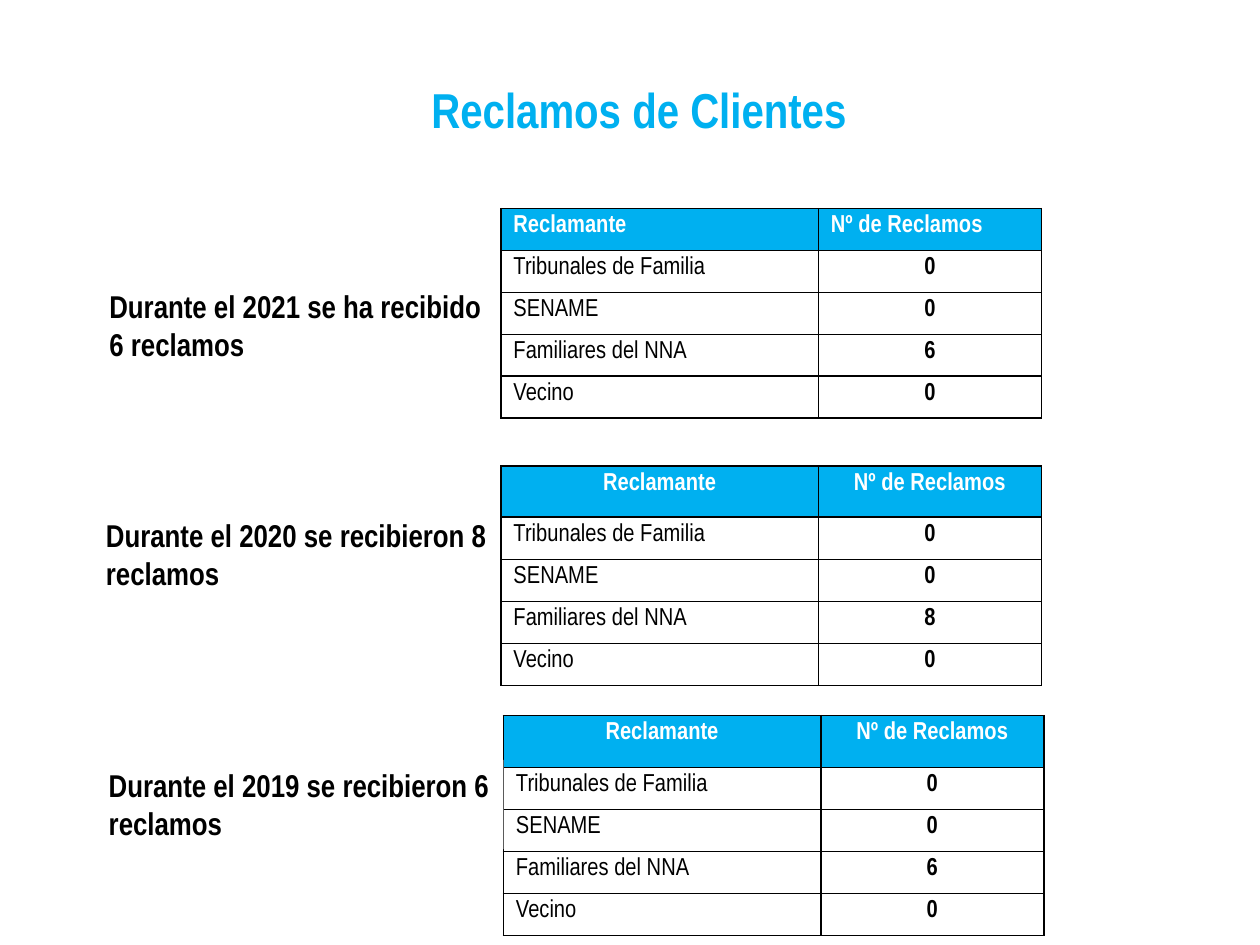
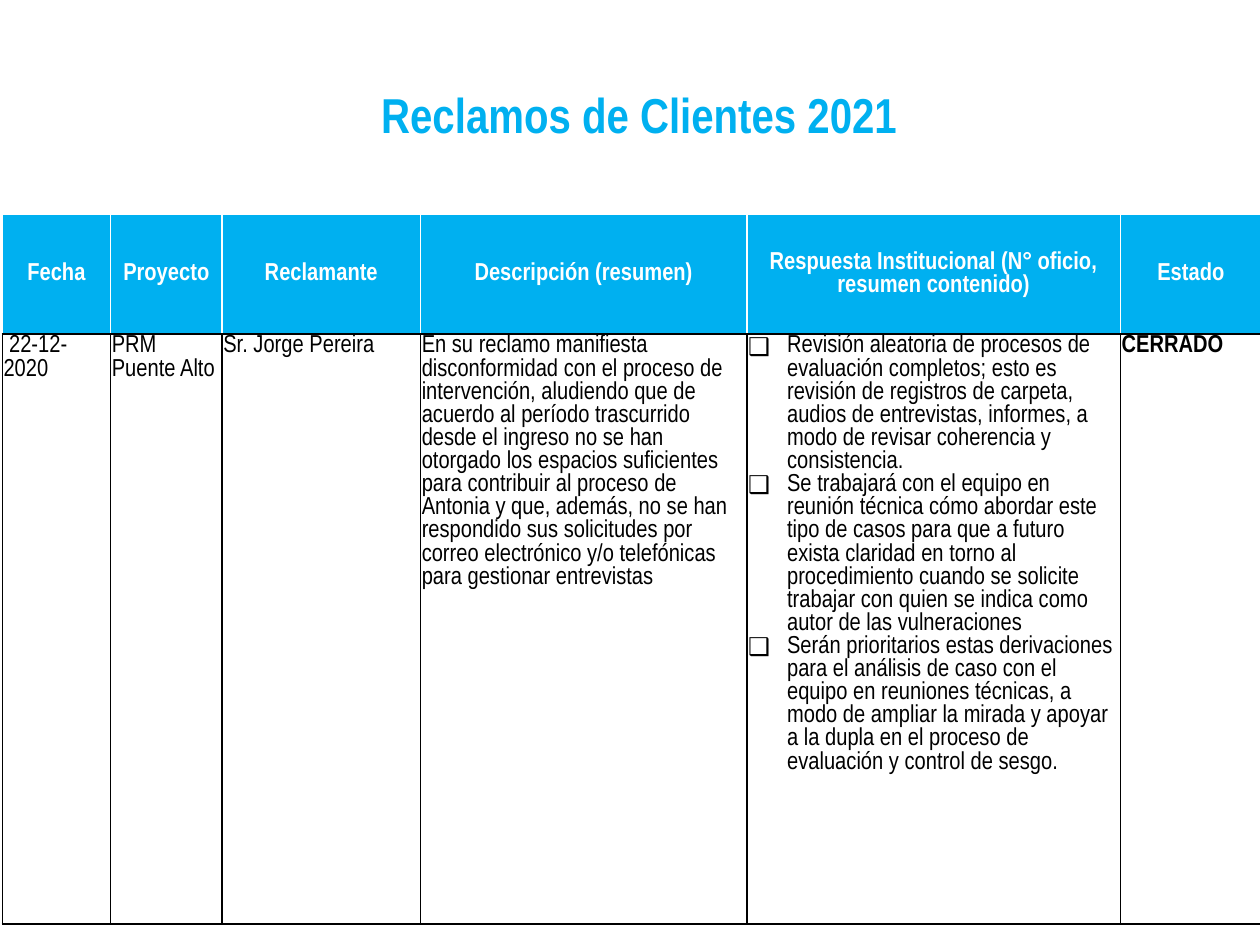
from collections import namedtuple

from lxml.etree import SubElement
from pptx import Presentation
from pptx.dml.color import RGBColor
from pptx.enum.text import MSO_ANCHOR, MSO_AUTO_SIZE, PP_ALIGN
from pptx.oxml import parse_xml
from pptx.oxml.ns import nsdecls, qn
from pptx.util import Inches, Pt

Box = namedtuple("Box", "left top width height")

SLIDE_WIDTH, SLIDE_HEIGHT = Inches(10), Inches(7.5)
COLUMN, ROW = SLIDE_WIDTH / 100, SLIDE_HEIGHT / 75
SKY, BLACK, WHITE = "00B0F0", "000000", "FFFFFF"
FONT = "Arial Narrow"

TITLE = {"name": FONT, "size": Pt(28), "bold": True}
LABEL = {"name": FONT, "size": Pt(18), "bold": True}
STRONG = {"name": FONT, "size": Pt(14), "bold": True}
PLAIN = {"name": FONT, "size": Pt(14), "bold": False}
CLAIM_MARGINS = {"margin_left": Inches(0.1), "margin_right": Inches(0.1),
                 "margin_top": Inches(0.05), "margin_bottom": Inches(0.05)}
DETAIL_MARGINS = {"margin_left": Inches(0.01), "margin_right": Inches(0.01),
                  "margin_top": Inches(0.01), "margin_bottom": 0}

CLAIMANTS = ["Tribunales de Familia", "SENAME", "Familiares del NNA", "Vecino"]
CLAIM_COLUMNS = [25.2, 17.7]
CLAIM_YEARS = [
    {"box": Box(7.7, 16.55, 74.95, 16.65), "label_drop": 5.75, "header_height": 3.33,
     "label": "Durante el 2021 se ha recibido 6 reclamos",
     "counts": [0, 0, 6, 0], "header_align": PP_ALIGN.LEFT, "label_fill": None},
    {"box": Box(7.43, 37, 75.22, 17.4), "label_drop": 3.45, "header_height": 4.05,
     "label": "Durante el 2020 se recibieron 8 reclamos",
     "counts": [0, 0, 8, 0], "header_align": PP_ALIGN.CENTER, "label_fill": None},
    {"box": Box(7.65, 56.8, 75.2, 17.4), "label_drop": 3.5, "header_height": 4.1,
     "label": "Durante el 2019 se recibieron 6 reclamos",
     "counts": [0, 0, 6, 0], "header_align": PP_ALIGN.CENTER, "label_fill": WHITE},
]

DETAIL_COLUMNS = [8.6, 8.85, 15.75, 25.9, 29.65, 11.2]
DETAIL_ROWS = [9.5, 9.5, 9.5, 9.5, 18.35]
FIRST_MERGED = 3
DETAIL_HEADERS = ["Fecha", "Proyecto", "Reclamante", "Descripción (resumen)",
                  "Respuesta Institucional (N° oficio, resumen contenido)", "Estado"]
DETAIL_TEXTS = [
    [" 22-12-2020"],
    ["PRM Puente Alto"],
    ["Sr. Jorge Pereira"],
    ["En su reclamo manifiesta disconformidad con el proceso de intervención, "
     "aludiendo que de acuerdo al período trascurrido desde el ingreso no se han "
     "otorgado los espacios suficientes para contribuir al proceso de Antonia y que, "
     "además, no se han respondido sus solicitudes por correo electrónico y/o "
     "telefónicas para gestionar entrevistas"],
    ["Revisión aleatoria de procesos de evaluación completos; esto es revisión de "
     "registros de carpeta, audios de entrevistas, informes, a modo de revisar "
     "coherencia y consistencia.",
     "Se trabajará con el equipo en reunión técnica cómo abordar este tipo de casos "
     "para que a futuro exista claridad en torno al procedimiento cuando se solicite "
     "trabajar con quien se indica como autor de las vulneraciones",
     "Serán prioritarios estas derivaciones para el análisis de caso con el equipo en "
     "reuniones técnicas, a modo de ampliar la mirada y apoyar a la dupla en el proceso "
     "de evaluación y control de sesgo."],
    ["CERRADO"],
]


def color(value):
    return RGBColor.from_string(value)


def apply(target, values):
    for name, value in values.items():
        setattr(target, name, value)


def place(box):
    return [round(length) for length in (box.left * COLUMN, box.top * ROW,
                                         box.width * COLUMN, box.height * ROW)]


def add_bullet(para):
    properties = para._p.get_or_add_pPr()
    properties.set("marL", str(Inches(0.31)))
    properties.set("indent", str(-Inches(0.31)))
    SubElement(properties, qn("a:buFont")).set("typeface", "Arial")
    SubElement(properties, qn("a:buChar")).set("char", "❑")


def write(frame, texts, style, ink, align=PP_ALIGN.LEFT, bullets=False):
    for index, text in enumerate(texts):
        para = frame.add_paragraph() if index else frame.paragraphs[0]
        para.alignment = align
        if bullets:
            add_bullet(para)
        span = para.add_run()
        span.text = text
        apply(span.font, style)
        span.font.color.rgb = color(ink)


def format_cell(cell, fill, margins, borders):
    apply(cell, margins)
    cell.fill.solid()
    cell.fill.fore_color.rgb = color(fill)
    properties = cell._tc.get_or_add_tcPr()
    for index, side in enumerate("LRTB"):
        paint = "<a:noFill/>"
        if side in borders:
            paint = f'<a:solidFill><a:srgbClr val="{borders[side]}"/></a:solidFill>'
        properties.insert(index, parse_xml(
            f'<a:ln{side} {nsdecls("a")} w="{Pt(1)}">{paint}</a:ln{side}>'))


def add_grid(page, box, columns, rows):
    table = page.shapes.add_table(len(rows), len(columns), *place(box)).table
    apply(table, {"first_row": False, "horz_banding": False})
    for column, width in zip(table.columns, columns):
        column.width = round(width * COLUMN)
    for row, height in zip(table.rows, rows):
        row.height = round(height * ROW)
    return table


def add_page(deck, title, top):
    page = deck.slides.add_slide(deck.slide_layouts[5])
    holder = page.shapes.title
    apply(holder, dict(zip(("left", "top", "width", "height"),
                           place(Box(13.8, top, 72.4, 8.1)))))
    frame = holder.text_frame
    apply(frame, {"word_wrap": True, "auto_size": MSO_AUTO_SIZE.NONE,
                  "vertical_anchor": MSO_ANCHOR.MIDDLE, "margin_left": Inches(0.24)})
    write(frame, [title], TITLE, SKY, PP_ALIGN.CENTER)
    return page


def add_claims(page, box, label, label_drop, label_fill, counts, header_height, header_align):
    width = sum(CLAIM_COLUMNS)
    row_height = (box.height - header_height) / len(counts)
    table_box = Box(box.left + box.width - width, box.top, width, box.height)
    table = add_grid(page, table_box, CLAIM_COLUMNS,
                     [header_height] + [row_height] * len(counts))
    borders = dict.fromkeys("LRTB", BLACK)
    for cell in table.iter_cells():
        format_cell(cell, WHITE, CLAIM_MARGINS, borders)
    for column, header in enumerate(["Reclamante", "Nº de Reclamos"]):
        cell = table.cell(0, column)
        cell.fill.fore_color.rgb = color(SKY)
        write(cell.text_frame, [header], STRONG, WHITE, header_align)
    for row, (claimant, count) in enumerate(zip(CLAIMANTS, counts), 1):
        write(table.cell(row, 0).text_frame, [claimant], PLAIN, BLACK)
        write(table.cell(row, 1).text_frame, [str(count)], STRONG, BLACK, PP_ALIGN.CENTER)

    note = page.shapes.add_textbox(*place(Box(box.left, box.top + label_drop, 32.3, 7.1)))
    if label_fill:
        note.fill.solid()
        note.fill.fore_color.rgb = color(label_fill)
    apply(note.text_frame, {"word_wrap": True, "auto_size": MSO_AUTO_SIZE.SHAPE_TO_FIT_TEXT})
    write(note.text_frame, [label], LABEL, BLACK)


def add_details(page, box):
    table = add_grid(page, box, DETAIL_COLUMNS, DETAIL_ROWS)
    last = len(DETAIL_ROWS) - 1
    for column, (header, texts) in enumerate(zip(DETAIL_HEADERS, DETAIL_TEXTS)):
        merged = column >= FIRST_MERGED
        head = table.cell(0, column)
        format_cell(head, SKY, DETAIL_MARGINS, {"L": WHITE, "R": WHITE, "T": WHITE, "B": BLACK})
        head.vertical_anchor = MSO_ANCHOR.MIDDLE
        write(head.text_frame, [header], STRONG, WHITE, PP_ALIGN.CENTER)
        for row in range(1, last + 1):
            sides = "LR" + "T" * (row == 1) + "B" * (row == last or merged and row == 1)
            format_cell(table.cell(row, column), WHITE, DETAIL_MARGINS,
                        dict.fromkeys(sides, BLACK))
        body = table.cell(1, column)
        if merged:
            body.merge(table.cell(last, column))
        style = STRONG if header == "Estado" else PLAIN
        write(body.text_frame, texts, style, BLACK, bullets=len(texts) > 1)


def main():
    deck = Presentation()
    apply(deck, {"slide_width": SLIDE_WIDTH, "slide_height": SLIDE_HEIGHT})
    summary = add_page(deck, "Reclamos de Clientes", 4.6)
    for year in CLAIM_YEARS:
        add_claims(summary, **year)
    details = add_page(deck, "Reclamos de Clientes 2021", 5)
    add_details(details, Box(0.18, 17, sum(DETAIL_COLUMNS), sum(DETAIL_ROWS)))
    deck.save("out.pptx")


if __name__ == "__main__":
    main()
